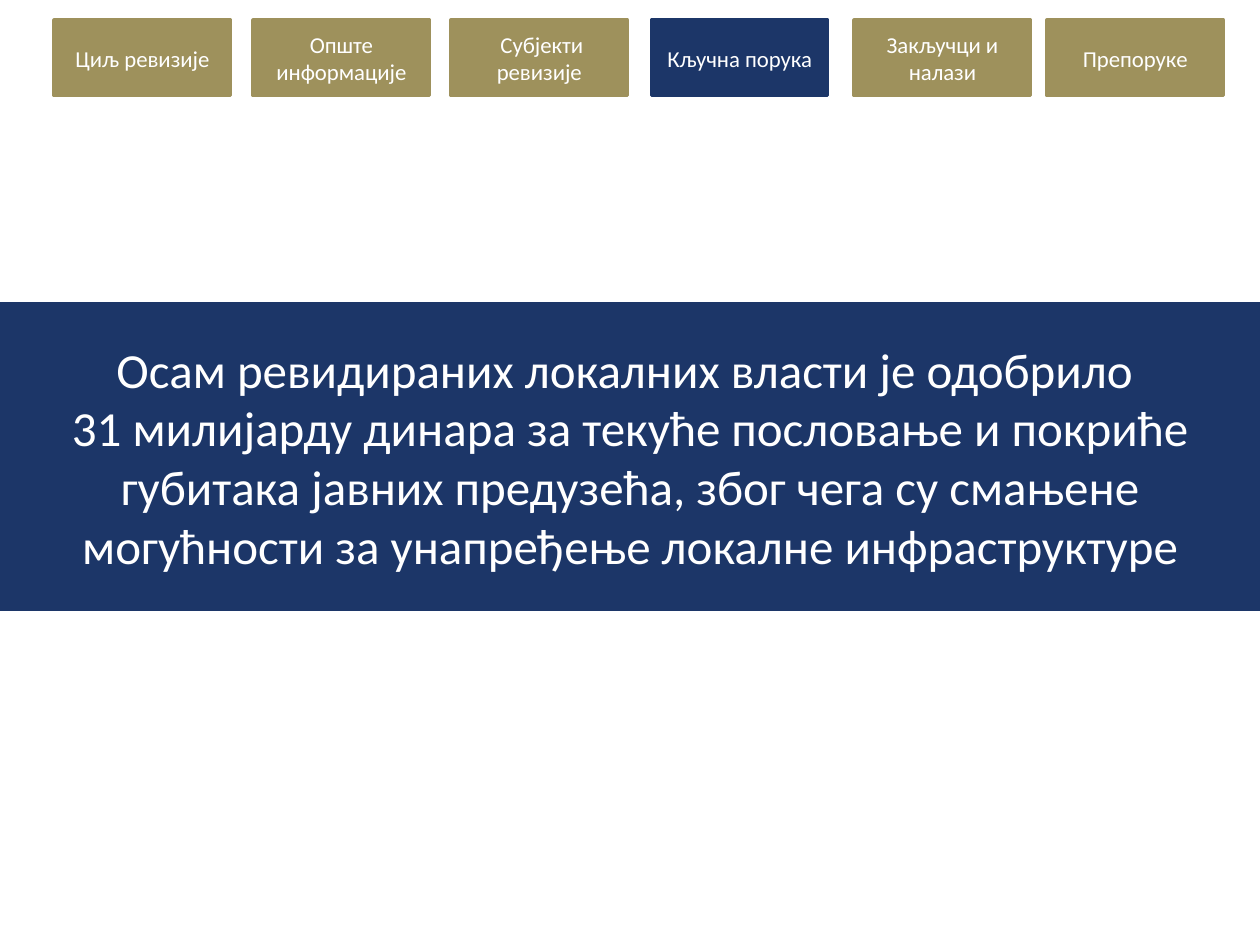
from pptx import Presentation
from pptx.dml.color import RGBColor
from pptx.enum.shapes import MSO_SHAPE
from pptx.enum.text import MSO_ANCHOR, PP_ALIGN
from pptx.util import Inches, Pt

RECTANGLE = MSO_SHAPE.RECTANGLE
MIDDLE = MSO_ANCHOR.MIDDLE
CENTER = PP_ALIGN.CENTER

COLORS = {"navy": "1C3668", "gold": "9E915C", "white": "FFFFFF"}
FONT = "Calibri"
SLIDE_WIDTH = Inches(10)
SLIDE_HEIGHT = Inches(7.5)
TAB_WIDTH = Inches(1.4)

TABS = [
    ("Циљ ревизије", 0.43),
    ("Опште информације", 2.01),
    (" Субјекти ревизије", 3.58),
    ("Кључна порука", 5.17),
    ("Закључци и налази", 6.78),
    ("Препоруке", 8.31),
]
ACTIVE_TAB = "Кључна порука"
MESSAGE = [
    "Осам ревидираних локалних власти је одобрило ",
    "31 милијарду динара за текуће пословање и покриће губитака јавних "
    "предузећа, због чега су смањене могућности за унапређење локалне "
    "инфраструктуре",
]


def color(name):
    return RGBColor.from_string(COLORS[name])


def add_panel(slide, box, fill, lines, size):
    shape = slide.shapes.add_shape(RECTANGLE, *box)
    shape.shadow.inherit = False
    shape.fill.solid()
    shape.fill.fore_color.rgb = color(fill)
    shape.line.color.rgb = color(fill)
    shape.line.width = Pt(2)
    frame = shape.text_frame
    frame.word_wrap = True
    frame.vertical_anchor = MIDDLE
    for index, line in enumerate(lines):
        paragraph = frame.add_paragraph() if index else frame.paragraphs[0]
        paragraph.alignment = CENTER
        run = paragraph.add_run()
        run.text = line
        run.font.name = FONT
        run.font.size = Pt(size)
        run.font.color.rgb = color("white")


def add_navigation(slide, top, height):
    for label, left in TABS:
        fill = "navy" if label == ACTIVE_TAB else "gold"
        add_panel(slide, (Inches(left), top, TAB_WIDTH, height), fill, [label], 13)


def add_message(slide, box):
    add_panel(slide, box, "navy", MESSAGE, 28)


def main():
    presentation = Presentation()
    presentation.slide_width = SLIDE_WIDTH
    presentation.slide_height = SLIDE_HEIGHT
    slide = presentation.slides.add_slide(presentation.slide_layouts[6])
    slide.background.fill.solid()
    slide.background.fill.fore_color.rgb = color("white")
    add_message(slide, (0, Inches(2.41), SLIDE_WIDTH, Inches(2.43)))
    add_navigation(slide, Inches(0.16), Inches(0.6))
    presentation.save("out.pptx")


if __name__ == "__main__":
    main()
